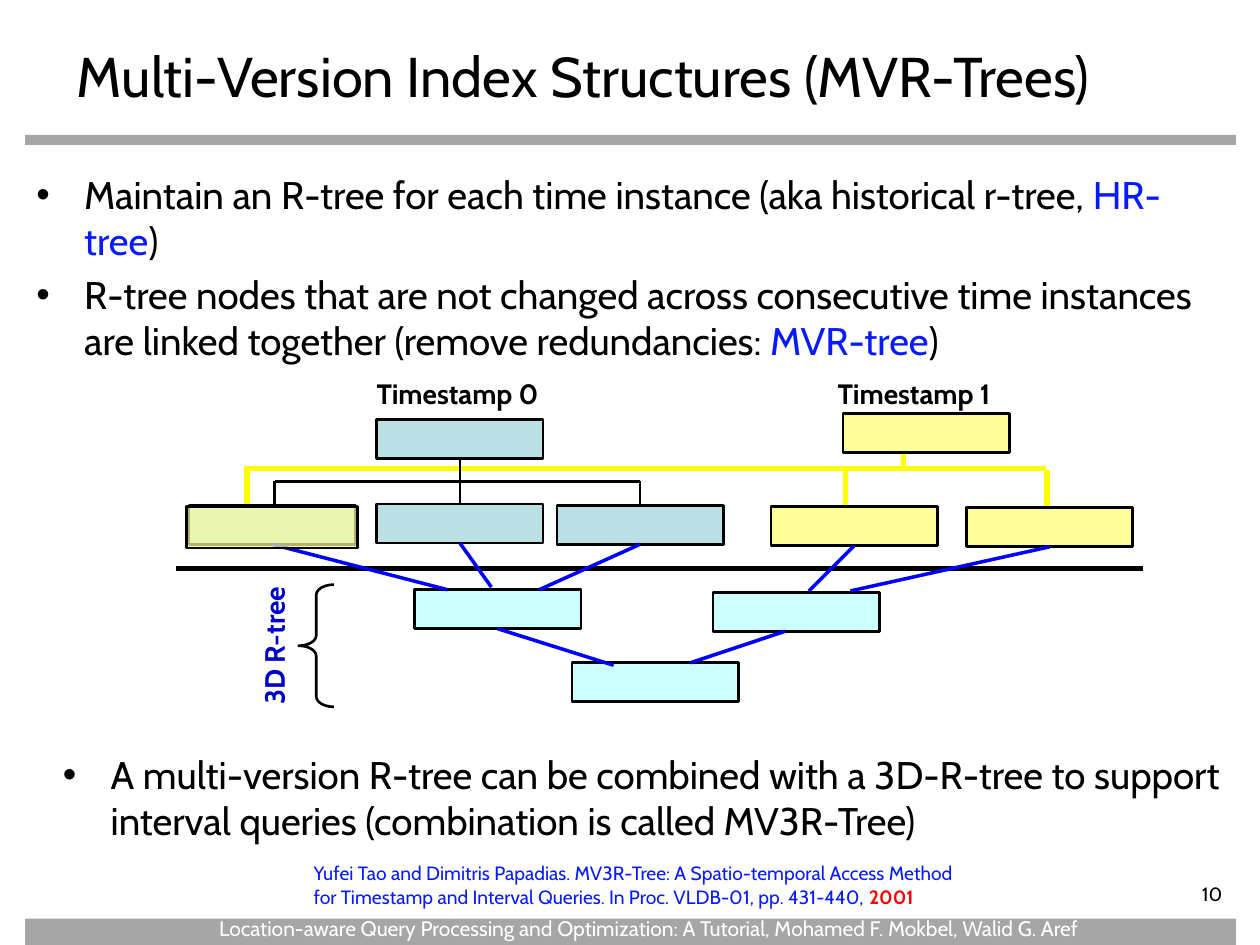
from lxml import etree
from pptx import Presentation
from pptx.dml.color import RGBColor
from pptx.enum import shapes, text
from pptx.oxml.ns import qn
from pptx.util import Inches, Pt

FONT = "Cabin"
BLACK, GRAY, WHITE = "000000", "A6A6A6", "FFFFFF"
ACCENT, LINK_BLUE, LABEL_BLUE, RED = "081BFF", "0000FF", "0000CC", "FF0000"
TEAL, PALE_YELLOW, YELLOW, CYAN = "BBE0E3", "FFFF99", "FFFF00", "CCFFFF"
NODE_SIZE = (1.32, 0.31)
TOP, BOTTOM = 0, 2


def color(hex_code):
    return RGBColor.from_string(hex_code)


def add_runs(paragraph, runs, size):
    """Each run is (words, colour) or (words, colour, bold)."""
    for words, hex_code, *bold in runs:
        run = paragraph.add_run()
        run.text = words
        run.font.name = FONT
        run.font.size = Pt(size)
        run.font.bold = bool(bold and bold[0])
        run.font.color.rgb = color(hex_code)


def add_text(slide, box, runs, size, align=text.PP_ALIGN.LEFT):
    textbox = slide.shapes.add_textbox(*map(Inches, box))
    frame = textbox.text_frame
    frame.word_wrap = True
    frame.paragraphs[0].alignment = align
    add_runs(frame.paragraphs[0], runs, size)
    return textbox


def add_bullets(slide, box, items, size=22):
    frame = slide.shapes.add_textbox(*map(Inches, box)).text_frame
    frame.word_wrap = True
    for i, runs in enumerate(items):
        paragraph = frame.add_paragraph() if i else frame.paragraphs[0]
        props = paragraph._p.get_or_add_pPr()
        props.set("marL", str(Inches(0.38)))
        props.set("indent", str(-Inches(0.38)))
        etree.SubElement(props, qn("a:buFont")).set("typeface", "Arial")
        etree.SubElement(props, qn("a:buChar")).set("char", "•")
        if i:
            paragraph.space_before = Pt(size * 0.2)
        add_runs(paragraph, runs, size)


def add_box(slide, box, fill, outlined=True, alpha=None):
    rect = slide.shapes.add_shape(shapes.MSO_SHAPE.RECTANGLE, *map(Inches, box))
    rect.shadow.inherit = False
    rect.fill.solid()
    rect.fill.fore_color.rgb = color(fill)
    if alpha is not None:
        rgb = rect._element.spPr.find(".//" + qn("a:srgbClr"))
        etree.SubElement(rgb, qn("a:alpha")).set("val", str(alpha * 1000))
    if outlined:
        rect.line.color.rgb = color(BLACK)
        rect.line.width = Pt(1.5)
    else:
        rect.line.fill.background()
    return rect


def add_node(slide, left, top, fill):
    return add_box(slide, (left, top, *NODE_SIZE), fill)


def add_line(slide, start, end, hex_code, width, from_node=None, to_node=None):
    """A node is joined at (shape, side)."""
    line = slide.shapes.add_connector(
        shapes.MSO_CONNECTOR.STRAIGHT, *map(Inches, (*start, *end)))
    line.line.color.rgb = color(hex_code)
    line.line.width = Pt(width)
    etree.SubElement(line._element.spPr, qn("a:effectLst"))
    if from_node:
        line.begin_connect(*from_node)
    if to_node:
        line.end_connect(*to_node)


def add_title(slide, words):
    title = slide.shapes.title
    title.left, title.top, title.width, title.height = map(
        Inches, (0.51, 0.28, 9, 0.55))
    frame = title.text_frame
    frame.vertical_anchor = text.MSO_ANCHOR.TOP
    frame.paragraphs[0].alignment = text.PP_ALIGN.LEFT
    add_runs(frame.paragraphs[0], [(words, BLACK)], 32)


def add_version_trees(slide):
    # Divider between the version trees and the 3D R-tree
    add_line(slide, (1.4, 4.51), (9.07, 4.51), BLACK, 3)

    # Timestamp 1 branches, behind the nodes
    for start, end in [
        ((7.17, 3.49), (7.17, 3.72)),
        ((8.3, 3.72), (1.94, 3.72)),
        ((1.96, 3.72), (1.96, 4.01)),
        ((6.71, 3.74), (6.71, 4.03)),
        ((8.31, 3.73), (8.31, 4.02)),
    ]:
        add_line(slide, start, end, YELLOW, 3)

    for left, words in [(2.89, "Timestamp 0"), (6.55, "Timestamp 1")]:
        add_text(slide, (left, 2.94, 1.72, 0.37), [(words, BLACK, True)], 16)

    # Roots and leaves
    root = add_node(slide, 2.99, 3.33, TEAL)
    add_node(slide, 6.69, 3.28, PALE_YELLOW)
    leaves = [add_node(slide, *node) for node in [
        (1.5, 4.01, TEAL), (2.99, 4, TEAL), (4.42, 4.01, TEAL),
        (6.12, 4.02, PALE_YELLOW), (7.67, 4.03, PALE_YELLOW)]]

    # Timestamp 0 branches
    add_line(slide, (3.65, 3.64), (3.65, 4), BLACK, 1.5,
             (root, BOTTOM), (leaves[1], TOP))
    add_line(slide, (5.08, 3.82), (2.18, 3.82), BLACK, 1.5)
    add_line(slide, (2.18, 3.82), (2.18, 4.01), BLACK, 1.5)
    add_line(slide, (5.08, 3.82), (5.08, 4.01), BLACK, 1.5,
             to_node=(leaves[2], TOP))
    return leaves


def add_3d_tree(slide, leaves):
    add_node(slide, 4.54, 5.26, CYAN)
    left_node = add_node(slide, 3.29, 4.68, CYAN)
    add_node(slide, 5.66, 4.7, CYAN)

    # Links from the version-tree leaves, then down to the 3D root
    link_starts = [(3.55, 4.68), (3.9, 4.66), (4.28, 4.68),
                   (6.42, 4.69), (6.75, 4.69)]
    for start, leaf in zip(link_starts, leaves):
        add_line(slide, start, start, LINK_BLUE, 2, to_node=(leaf, BOTTOM))
    add_line(slide, (4.87, 5.28), (3.97, 4.98), LINK_BLUE, 2,
             to_node=(left_node, BOTTOM))
    add_line(slide, (5.48, 5.26), (6.23, 5.01), LINK_BLUE, 2)

    # Brace and its upright label
    brace = slide.shapes.add_shape(
        shapes.MSO_SHAPE.LEFT_BRACE, *map(Inches, (2.37, 4.64, 0.28, 0.97)))
    brace.shadow.inherit = False
    brace.adjustments[0], brace.adjustments[1] = 0.29, 0.5
    brace.fill.background()
    brace.line.color.rgb = color(BLACK)
    brace.line.width = Pt(1.5)
    label = add_text(slide, (1.56, 4.94, 1.23, 0.37),
                     [("3D R-tree", LABEL_BLUE, True)], 16,
                     text.PP_ALIGN.CENTER)
    label.rotation = 270


def main():
    prs = Presentation()
    prs.slide_width, prs.slide_height = Inches(10), Inches(7.5)
    slide = prs.slides.add_slide(prs.slide_layouts[5])

    # Heading and page bars
    add_box(slide, (0.2, 1.07, 9.61, 0.08), GRAY, outlined=False)
    add_box(slide, (0.2, 7.29, 9.61, 0.21), GRAY, outlined=False)
    add_title(slide, "Multi-Version Index Structures (MVR-Trees)")

    add_bullets(slide, (0.19, 1.31, 9.61, 1.4), [
        [("Maintain an R-tree for each time instance (aka historical r-tree, ",
          BLACK), ("HR-tree", ACCENT), (")", BLACK)],
        [("R-tree nodes that are not changed across consecutive time "
          "instances are linked together (remove redundancies: ", BLACK),
         ("MVR-tree", ACCENT), (")", BLACK)],
    ])

    # Diagram, with the shared leaf tinted by both versions
    leaves = add_version_trees(slide)
    add_3d_tree(slide, leaves)
    add_box(slide, (1.48, 4.02, 1.36, 0.33), PALE_YELLOW, alpha=70)

    add_bullets(slide, (0.4, 5.91, 9.48, 1.09), [
        [("A multi-version R-tree can be combined with a 3D-R-tree to support "
          "interval queries (combination is called MV3R-Tree)", BLACK)],
    ])

    # Citation, footer and page number
    add_text(slide, (2.39, 6.79, 5.28, 0.47), [
        ("Yufei Tao and Dimitris Papadias. MV3R-Tree: A Spatio-temporal Access "
         "Method for Timestamp and Interval Queries. In Proc. VLDB-01, "
         "pp. 431-440, ", ACCENT), ("2001", RED, True)], 11)
    add_text(slide, (1.64, 7.22, 7.8, 0.3), [
        ("Location-aware Query Processing and Optimization: A Tutorial, "
         "Mohamed F. Mokbel, Walid G. Aref", WHITE)], 12)
    page = add_text(slide, (8.7, 7, 1.1, 0.22), [("10", BLACK)], 11,
                    text.PP_ALIGN.RIGHT).text_frame
    page.margin_left = page.margin_top = page.margin_bottom = 0

    prs.save("out.pptx")


if __name__ == "__main__":
    main()
